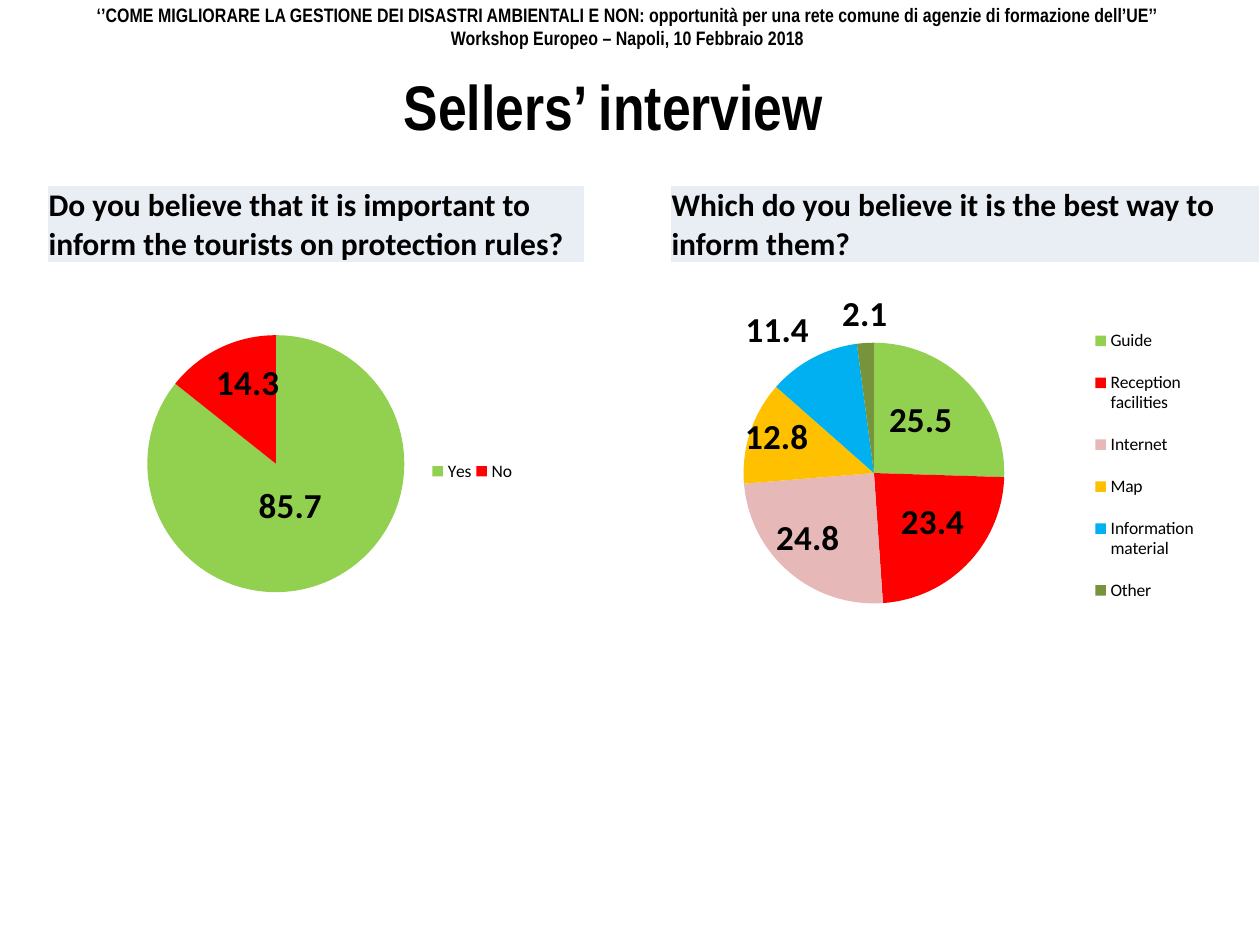
from dataclasses import dataclass

from lxml.etree import SubElement
from pptx import Presentation
from pptx.chart.data import CategoryChartData as ChartData
from pptx.dml.color import RGBColor as Rgb
from pptx.enum.chart import XL_CHART_TYPE as ChartType
from pptx.enum.chart import XL_LABEL_POSITION as LabelPos
from pptx.enum.chart import XL_LEGEND_POSITION as LegendPos
from pptx.enum.text import MSO_ANCHOR as Anchor
from pptx.enum.text import PP_ALIGN as Align
from pptx.oxml import parse_xml
from pptx.oxml.ns import nsdecls, qn
from pptx.util import Pt


@dataclass(frozen=True)
class Theme:
    heading_font: str = "Arial Narrow"
    body_font: str = "Calibri"
    text: str = "000000"
    border: str = "FFFFFF"
    question_fill: str = "E9EDF4"
    slices: tuple = ("92D050", "FF0000", "E6B9B8", "FFC000", "00B0F0", "77933C")
    title_size: float = 36
    event_size: float = 11.1
    question_size: float = 18
    value_size: float = 20
    legend_size: float = 10


THEME = Theme()


def set_format(target, values):
    for name, value in values.items():
        setattr(target, name, value)


def set_font(font, name, size, bold=True):
    set_format(font, {"name": name, "size": Pt(size), "bold": bold})
    font.color.rgb = Rgb.from_string(THEME.text)


def add_heading(slide, box, lines, size):
    frame = slide.shapes.add_textbox(*map(Pt, box)).text_frame
    set_format(frame, {"word_wrap": True, "vertical_anchor": Anchor.MIDDLE,
                       "margin_top": 0, "margin_bottom": 0})
    frame.text = "\n".join(lines)
    for paragraph in frame.paragraphs:
        paragraph.alignment = Align.CENTER
        set_font(paragraph.runs[0].font, THEME.heading_font, size)


def add_question(slide, box, question):
    table = slide.shapes.add_table(1, 1, *map(Pt, box)).table
    set_format(table, {"first_row": False, "horz_banding": False})
    cell = table.cell(0, 0)
    cell.text = question
    set_format(cell, {"vertical_anchor": Anchor.BOTTOM, "margin_left": Pt(0.75),
                      "margin_right": Pt(0.75), "margin_top": Pt(0.75),
                      "margin_bottom": 0})
    set_font(cell.text_frame.paragraphs[0].runs[0].font,
             THEME.body_font, THEME.question_size)
    properties = cell._tc.get_or_add_tcPr()
    for side in ("lnL", "lnR", "lnT", "lnB"):
        border = SubElement(properties, qn(f"a:{side}"), w=str(Pt(1)))
        fill = SubElement(border, qn("a:solidFill"))
        SubElement(fill, qn("a:srgbClr"), val=THEME.border)
    cell.fill.solid()
    cell.fill.fore_color.rgb = Rgb.from_string(THEME.question_fill)


def manual_layout(**values):
    parts = "".join(f'<c:{name} val="{value}"/>' for name, value in values.items())
    return parse_xml(f'<c:layout {nsdecls("c")}><c:manualLayout>{parts}'
                     "</c:manualLayout></c:layout>")


def area_layout(x, y, w, h, **target):
    return manual_layout(**target, xMode="edge", yMode="edge", x=x, y=y, w=w, h=h)


def place_plot(chart, area):
    plot_area = chart._chartSpace.chart.plotArea
    for layout in plot_area.findall(qn("c:layout")):
        plot_area.remove(layout)
    plot_area.insert(0, area_layout(*area, layoutTarget="inner"))


def place_legend(chart, area):
    chart.has_legend = True
    legend = chart.legend
    set_format(legend, {"position": LegendPos.RIGHT, "include_in_layout": False})
    set_font(legend.font, THEME.body_font, THEME.legend_size, False)
    element = legend._element
    for layout in element.findall(qn("c:layout")):
        element.remove(layout)
    element.find(qn("c:legendPos")).addnext(area_layout(*area))


def format_slice(point, colour, position, shift):
    point.format.fill.solid()
    point.format.fill.fore_color.rgb = Rgb.from_string(colour)
    label = point.data_label
    set_font(label.font, THEME.body_font, THEME.value_size)
    label.position = position
    if any(shift):
        element = label._dLbl
        element.find(qn("c:idx")).addnext(manual_layout(x=shift[0], y=shift[1]))


def add_pie(slide, box, answers, plot_area, legend_area):
    data = ChartData(number_format="0.0")
    data.categories = [answer for answer, *_ in answers]
    data.add_series("Series 1", [value for _, value, *_ in answers])
    chart = slide.shapes.add_chart(ChartType.PIE, *map(Pt, box), data).chart
    chart.has_title = False
    set_font(chart.font, THEME.body_font, THEME.legend_size, False)
    plot = chart.plots[0]
    set_format(plot, {"vary_by_categories": True, "has_data_labels": True})
    plot.data_labels.show_value = True
    set_font(plot.data_labels.font, THEME.body_font, THEME.value_size)
    points = plot.series[0].points
    for index, (_, _, position, shift) in enumerate(answers):
        format_slice(points[index], THEME.slices[index], position, shift)
    place_plot(chart, plot_area)
    place_legend(chart, legend_area)


def main():
    deck = Presentation()
    set_format(deck, {"slide_width": Pt(720), "slide_height": Pt(540)})
    slide = deck.slides.add_slide(deck.slide_layouts[6])

    inside, outside = LabelPos.CENTER, LabelPos.OUTSIDE_END
    importance = [("Yes", 85.7, inside, (-0.03, -0.04)),
                  ("No", 14.3, inside, (0, -0.06))]
    channels = [("Guide", 25.5, inside, (0, -0.02)),
                ("Reception facilities", 23.4, inside, (0.02, 0.01)),
                ("Internet", 24.8, inside, (-0.04, 0.04)),
                ("Map", 12.8, inside, (-0.06, -0.04)),
                ("Information material", 11.4, outside, (0, 0)),
                ("Other", 2.1, outside, (0, 0))]
    add_pie(slide, (48, 157, 255, 216), importance,
            (0.14, 0.16, 0.58, 0.68), (0.77, 0.48, 0.2, 0.08))
    add_pie(slide, (360, 157, 336, 216), channels,
            (0.19, 0.18, 0.45, 0.69), (0.77, 0.09, 0.21, 0.83))

    add_heading(slide, (27, 30, 647, 60), ["Sellers’ interview"], THEME.title_size)
    add_heading(slide, (-3, 0, 723, 30), [
        "‘’COME MIGLIORARE LA GESTIONE DEI DISASTRI AMBIENTALI E NON: "
        "opportunità per una rete comune di agenzie di formazione dell’UE’’",
        "Workshop Europeo – Napoli, 10 Febbraio 2018"], THEME.event_size)
    add_question(slide, (27, 106, 307, 44), "Do you believe that it is important "
                 "to inform the tourists on protection rules?")
    add_question(slide, (383, 106, 337, 44),
                 "Which do you believe it is the best way to inform them?")
    deck.save("out.pptx")


if __name__ == "__main__":
    main()
